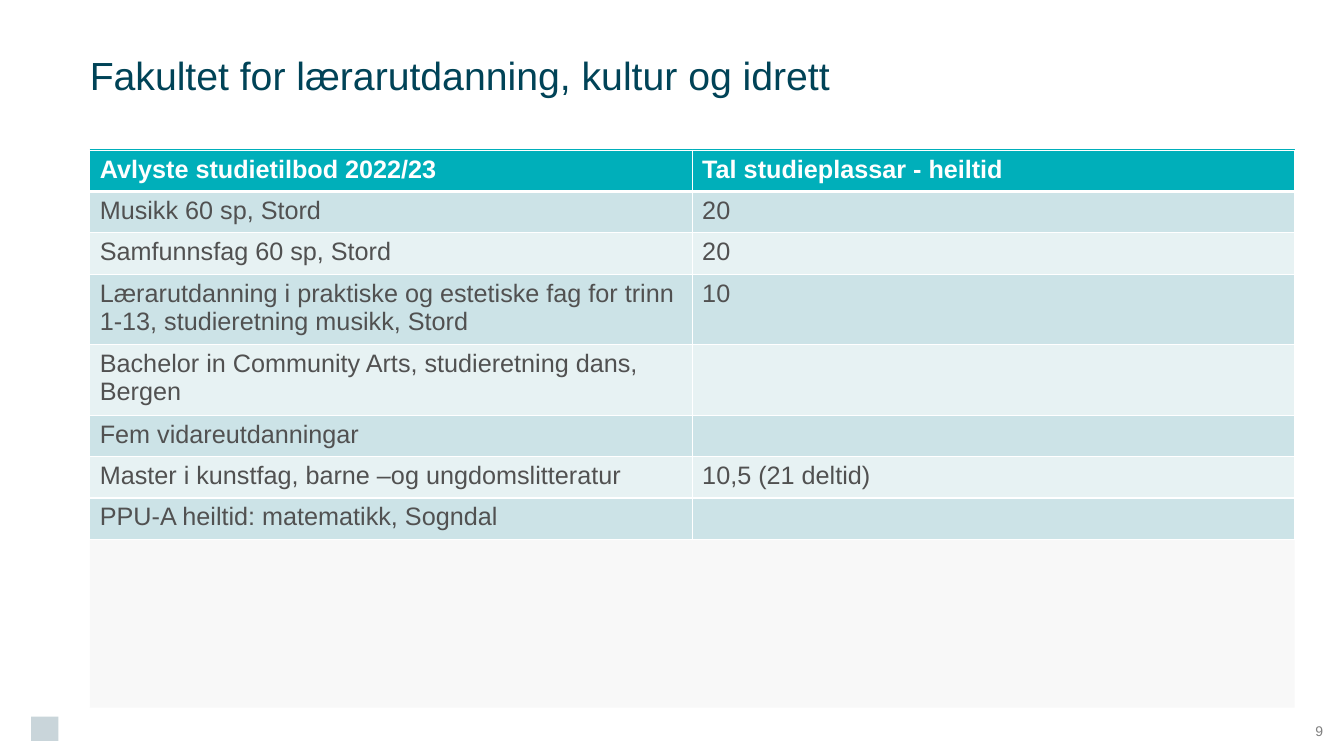
from lxml import etree
from pptx import Presentation
from pptx.dml.color import RGBColor
from pptx.enum.shapes import MSO_CONNECTOR, MSO_SHAPE
from pptx.enum.text import MSO_ANCHOR, PP_ALIGN
from pptx.oxml.ns import qn
from pptx.util import Inches, Pt

RECT = MSO_SHAPE.RECTANGLE
STRAIGHT = MSO_CONNECTOR.STRAIGHT
MIDDLE = MSO_ANCHOR.MIDDLE
LEFT, CENTER = PP_ALIGN.LEFT, PP_ALIGN.CENTER

WHITE = RGBColor(0xFF, 0xFF, 0xFF)
TEAL = RGBColor(0x00, 0xAF, 0xBA)
NAVY = RGBColor(0x00, 0x43, 0x57)
TEXT = RGBColor(0x51, 0x51, 0x51)
GREY = RGBColor(0x80, 0x80, 0x80)
PANEL = RGBColor(0xF2, 0xF2, 0xF2)
MARK = RGBColor(0xC9, 0xD5, 0xDA)
BAND_DARK = RGBColor(0xCC, 0xE3, 0xE7)
BAND_LIGHT = RGBColor(0xE7, 0xF2, 0xF3)

MARGIN, TOP, WIDTH = 0.89, 1.49, 11.95
ROW_HEIGHT = 0.41

ROWS = [
    ("Avlyste studietilbod 2022/23", "Tal studieplassar - heiltid"),
    ("Musikk 60 sp, Stord", "20"),
    ("Samfunnsfag 60 sp, Stord", "20"),
    ("Lærarutdanning i praktiske og estetiske fag for trinn 1-13, "
     "studieretning musikk, Stord", "10"),
    ("Bachelor in Community Arts, studieretning dans, Bergen", ""),
    ("Fem vidareutdanningar", ""),
    ("Master i kunstfag, barne –og ungdomslitteratur", "10,5 (21 deltid)"),
    ("PPU-A heiltid: matematikk, Sogndal", ""),
]


class SlideBuilder:
    font = "Arial"

    def __init__(self, slide):
        self.slide = slide
        self.shapes = slide.shapes

    def style(self, p, size, color, bold=False):
        for r in p.runs:
            r.font.name = self.font
            r.font.size = Pt(size)
            r.font.bold = bold
            r.font.color.rgb = color

    def rect(self, x, y, w, h, color, opacity=100):
        sp = self.shapes.add_shape(RECT, Inches(x), Inches(y), Inches(w), Inches(h))
        sp.shadow.inherit = False
        sp.fill.solid()
        sp.fill.fore_color.rgb = color
        sp.line.fill.background()
        if opacity < 100:
            clr = sp._element.spPr.find(qn("a:solidFill"))[0]
            etree.SubElement(clr, qn("a:alpha"), val=str(opacity * 1000))

    def line(self, x1, y1, x2, y2, color, width):
        cxn = self.shapes.add_connector(
            STRAIGHT, Inches(x1), Inches(y1), Inches(x2), Inches(y2))
        cxn.line.color.rgb = color
        cxn.line.width = Pt(width)
        etree.SubElement(cxn._element.spPr, qn("a:effectLst"))

    def text(self, x, y, w, h, text, size, color, align=LEFT):
        sp = self.shapes.add_textbox(Inches(x), Inches(y), Inches(w), Inches(h))
        tf = sp.text_frame
        tf.word_wrap = True
        tf.vertical_anchor = MIDDLE
        tf.margin_left = tf.margin_right = tf.margin_top = tf.margin_bottom = 0
        tf.text = text
        p = tf.paragraphs[0]
        p.alignment = align
        self.style(p, size, color)

    def borders(self, cell, bottom):
        tcPr = cell._tc.get_or_add_tcPr()
        widths = {"a:lnL": 1, "a:lnR": 1, "a:lnT": 1, "a:lnB": bottom}
        for i, (tag, width) in enumerate(widths.items()):
            ln = etree.Element(qn(tag), w=str(Pt(width)))
            fill = etree.SubElement(ln, qn("a:solidFill"))
            etree.SubElement(fill, qn("a:srgbClr"), val=str(WHITE))
            tcPr.insert(i, ln)

    def table(self, x, y, w, row_height, rows):
        n_cols = len(rows[0])
        table = self.shapes.add_table(
            len(rows), n_cols, Inches(x), Inches(y),
            Inches(w), Inches(row_height * len(rows))).table
        for i, row in enumerate(rows):
            header = i == 0
            band = BAND_DARK if i % 2 else BAND_LIGHT
            for j, value in enumerate(row):
                cell = table.cell(i, j)
                cell.text = value
                cell.fill.solid()
                cell.fill.fore_color.rgb = TEAL if header else band
                self.style(cell.text_frame.paragraphs[0], 18,
                           WHITE if header else TEXT, header)
                self.borders(cell, 3 if header else 1)


def main():
    prs = Presentation()
    prs.slide_width, prs.slide_height = Inches(13.33), Inches(7.5)
    s = SlideBuilder(prs.slides.add_slide(prs.slide_layouts[6]))
    s.rect(0.31, 7.11, 0.27, 0.24, MARK)
    s.rect(MARGIN, TOP, WIDTH, 5.53, PANEL, opacity=50)
    s.line(MARGIN, TOP, MARGIN + WIDTH, TOP, TEAL, 2)
    s.text(MARGIN, 0, WIDTH, 1.48,
           "Fakultet for lærarutdanning, kultur og idrett", 28, NAVY)
    s.table(MARGIN, TOP, WIDTH, ROW_HEIGHT, ROWS)
    s.text(12.84, 7.01, 0.49, 0.49, "9", 10, GREY, CENTER)
    prs.save("out.pptx")


if __name__ == "__main__":
    main()
